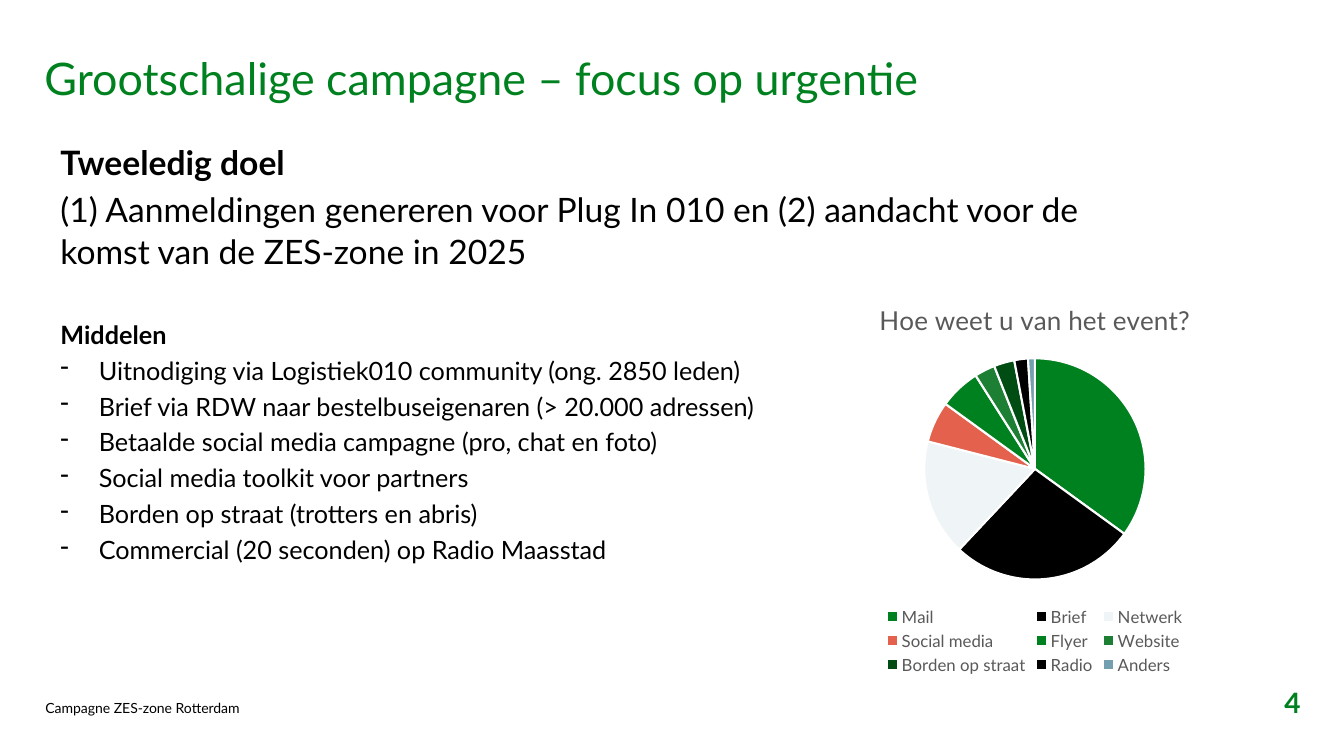
from lxml import etree
from pptx import Presentation
from pptx.chart.data import CategoryChartData
from pptx.dml.color import RGBColor
from pptx.enum.chart import XL_CHART_TYPE, XL_LEGEND_POSITION
from pptx.enum.text import MSO_ANCHOR, PP_ALIGN
from pptx.oxml import parse_xml
from pptx.oxml.ns import nsdecls, qn
from pptx.util import Inches, Pt

PIE = XL_CHART_TYPE.PIE
BOTTOM = XL_LEGEND_POSITION.BOTTOM
TOP, MIDDLE = MSO_ANCHOR.TOP, MSO_ANCHOR.MIDDLE
LEFT, RIGHT = PP_ALIGN.LEFT, PP_ALIGN.RIGHT

HUES = {
    "green": "00811F", "black": "000000", "mist": "EFF4F6", "coral": "E3614D",
    "leaf": "1D7F34", "pine": "004D13", "steel": "739FB0", "gray": "595959",
    "white": "FFFFFF",
}
GOAL = ("(1) Aanmeldingen genereren voor Plug In 010 en (2) aandacht "
        "voor de komst van de ZES-zone in 2025")
MEANS = [
    "Uitnodiging via Logistiek010 community (ong. 2850 leden)",
    "Brief via RDW naar bestelbuseigenaren (> 20.000 adressen)",
    "Betaalde social media campagne (pro, chat en foto)",
    "Social media toolkit voor partners",
    "Borden op straat (trotters en abris)",
    "Commercial (20 seconden) op Radio Maasstad",
]
SHARES = [
    ("Mail", 35, "green"), ("Brief", 27, "black"), ("Netwerk", 17, "mist"),
    ("Social media", 6, "coral"), ("Flyer", 6, "green"), ("Website", 3, "leaf"),
    ("Borden op straat", 3, "pine"), ("Radio", 2, "black"), ("Anders", 1, "steel"),
]
PLOT = {"x": 0.3, "y": 0.19, "w": 0.4, "h": 0.56}


class Deck:
    """Holds the style and the current slide."""

    def __init__(self, slide, face="Lato"):
        self.slide, self.face = slide, face

    def color(self, name):
        return RGBColor.from_string(HUES[name])

    def style(self, font, size, hue, bold=False):
        font.name, font.size, font.bold = self.face, Pt(size), bold
        font.color.rgb = self.color(hue)

    def place(self, shape, left, top, width, height):
        shape.left, shape.top = Inches(left), Inches(top)
        shape.width, shape.height = Inches(width), Inches(height)

    def frame(self, shape, anchor):
        frame = shape.text_frame
        frame.word_wrap, frame.vertical_anchor = True, anchor
        frame.margin_left = frame.margin_right = 0
        frame.margin_top = frame.margin_bottom = 0
        return frame

    def words(self, para, text, size, hue, bold=False, align=LEFT):
        para.alignment = align
        run = para.add_run()
        run.text = text
        self.style(run.font, size, hue, bold)

    def title(self, text, box):
        shape = self.slide.shapes.title
        self.place(shape, *box)
        para = self.frame(shape, MIDDLE).paragraphs[0]
        para.line_spacing = 0.92
        self.words(para, text, 32, "green")

    def label(self, text, box, size, hue, bold=False, align=LEFT):
        shape = self.slide.shapes.add_textbox(*map(Inches, box))
        para = self.frame(shape, MIDDLE).paragraphs[0]
        self.words(para, text, size, hue, bold, align)

    def bullet(self, para):
        props = para._p.get_or_add_pPr()
        props.set("marL", str(Inches(0.38)))
        props.set("indent", str(-Inches(0.38)))
        etree.SubElement(props, qn("a:buChar")).set("char", "-")

    def body(self, lines, box):
        shape = self.slide.shapes.add_textbox(*map(Inches, box))
        frame = self.frame(shape, TOP)
        for i, (text, size, bold, dash, gap) in enumerate(lines):
            para = frame.add_paragraph() if i else frame.paragraphs[0]
            if dash:
                self.bullet(para)
            para.line_spacing, para.space_before = 1.05, Pt(gap)
            self.words(para, text, size, "black", bold)

    def pie(self, name, shares, box):
        data = CategoryChartData()
        data.categories = [share[0] for share in shares]
        data.add_series(name, [share[1] for share in shares])
        chart = self.slide.shapes.add_chart(PIE, *map(Inches, box), data).chart
        self.style(chart.font, 10, "black")
        chart.has_title = True
        self.words(chart.chart_title.text_frame.paragraphs[0], name, 18.6, "gray")
        chart.has_legend = True
        chart.legend.position = BOTTOM
        chart.legend.include_in_layout = False
        self.style(chart.legend.font, 12, "gray")
        plot = chart.plots[0]
        plot.vary_by_categories = True
        for i, share in enumerate(shares):
            form = plot.series[0].points[i].format
            form.fill.solid()
            form.fill.fore_color.rgb = self.color(share[2])
            form.line.color.rgb = self.color("white")
            form.line.width = Pt(1.5)
        self.layout(chart)

    def layout(self, chart):
        area = chart._chartSpace.find(".//" + qn("c:plotArea"))
        for old in area.findall(qn("c:layout")):
            area.remove(old)
        modes = "".join(f'<c:{key}Mode val="edge"/>' for key in "xy")
        sizes = "".join(f'<c:{key} val="{val}"/>' for key, val in PLOT.items())
        area.insert(0, parse_xml(
            f'<c:layout {nsdecls("c")}><c:manualLayout><c:layoutTarget val="inner"/>'
            f'{modes}{sizes}</c:manualLayout></c:layout>'))


def main():
    show = Presentation()
    show.slide_width, show.slide_height = Inches(13.33), Inches(7.5)
    deck = Deck(show.slides.add_slide(show.slide_layouts[5]))
    deck.title("Grootschalige campagne – focus op urgentie", (0.44, 0.55, 12.44, 0.5))
    lines = [("Tweeledig doel", 24, True, False, 0), (GOAL, 24, False, False, 3),
             ("Middelen", 18, True, False, 33)]
    lines += [(text, 18, False, True, 3) for text in MEANS]
    deck.body(lines, (0.6, 1.39, 11.06, 5.17))
    deck.pie("Hoe weet u van het event?", SHARES, (7.49, 2.81, 5.55, 3.92))
    deck.label("Campagne ZES-zone Rotterdam", (0.45, 6.94, 8.11, 0.17), 10, "black")
    deck.label("4", (12.23, 6.8, 0.67, 0.34), 20, "green", True, RIGHT)
    show.save("out.pptx")


if __name__ == "__main__":
    main()
